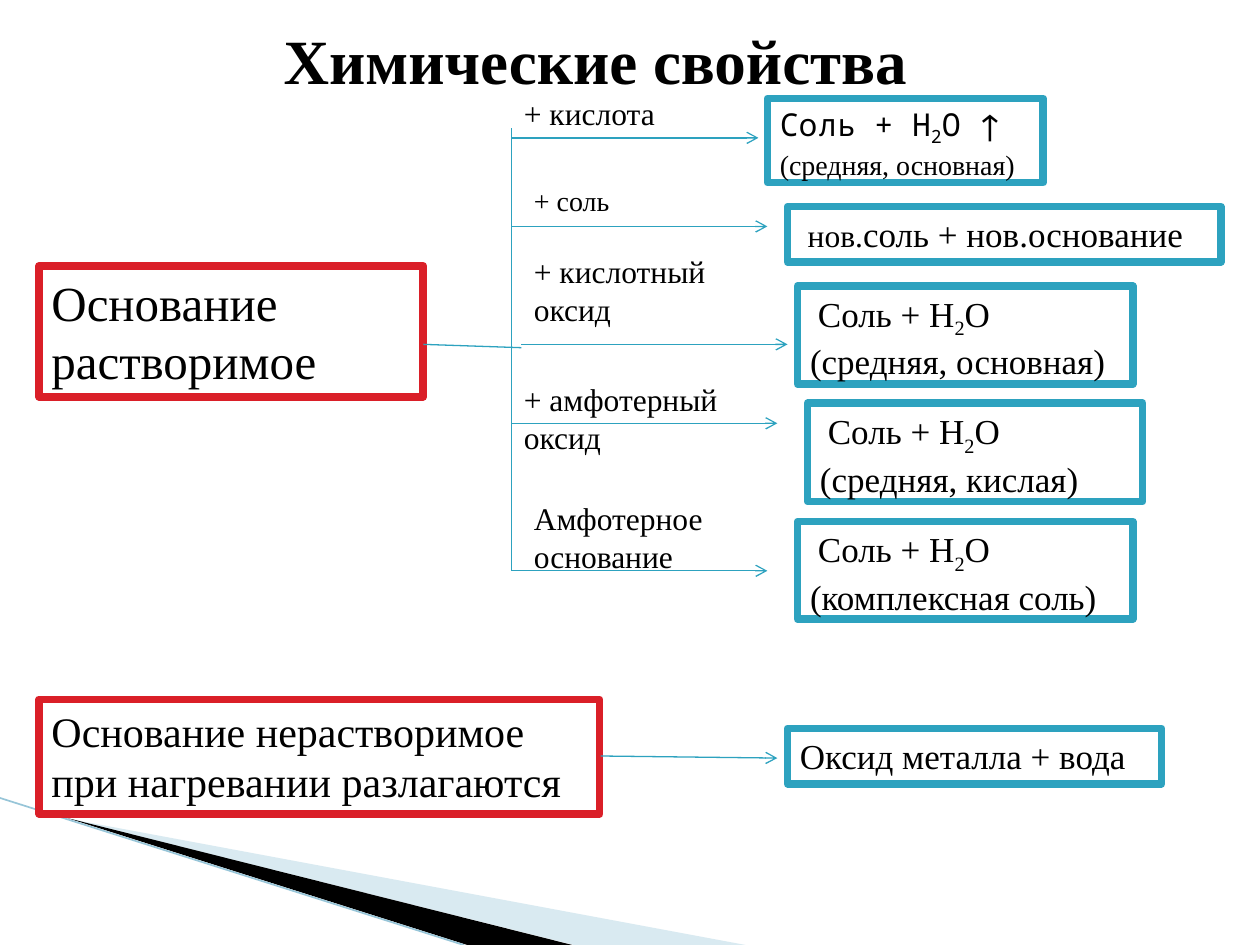
from dataclasses import dataclass

from lxml import etree
from pptx import Presentation
from pptx.dml.color import RGBColor
from pptx.enum.shapes import MSO_CONNECTOR, MSO_SHAPE
from pptx.enum.text import MSO_ANCHOR, MSO_AUTO_SIZE, PP_ALIGN
from pptx.oxml.ns import qn
from pptx.util import Pt

RECTANGLE = MSO_SHAPE.RECTANGLE
STRAIGHT = MSO_CONNECTOR.STRAIGHT
TOP, MIDDLE = MSO_ANCHOR.TOP, MSO_ANCHOR.MIDDLE
FIT_SHAPE = MSO_AUTO_SIZE.SHAPE_TO_FIT_TEXT
LEFT, CENTER = PP_ALIGN.LEFT, PP_ALIGN.CENTER
TITLE_ONLY = 5


@dataclass(frozen=True)
class Theme:
    text: str = "000000"
    paper: str = "FFFFFF"
    base: str = "DA1F28"
    product: str = "2DA2BF"
    wedge: str = "A0CBDC"
    edge: str = "97C5D8"
    font: str = "Times New Roman"
    mono: str = "Noto Sans Mono"
    symbol: str = "TeX Gyre Schola"
    title: int = 36
    heading: int = 28
    subheading: int = 24
    body: int = 20
    label: int = 18
    small: int = 16
    border: float = 4.33
    thin: float = 0.75


THEME = Theme()


def color(value):
    return RGBColor.from_string(value)


def add_text(paragraph, text, size=THEME.body, font=THEME.font, bold=False, subscript=False):
    run = paragraph.add_run()
    run.text = text
    run.font.size = Pt(size)
    run.font.name = font
    run.font.bold = bold
    run.font.color.rgb = color(THEME.text)
    if subscript:
        run._r.get_or_add_rPr().set("baseline", "-25000")


def fill_frame(frame, paragraphs):
    frame.word_wrap = True
    frame.auto_size = FIT_SHAPE
    frame.vertical_anchor = TOP
    for index, runs in enumerate(paragraphs):
        paragraph = frame.add_paragraph() if index else frame.paragraphs[0]
        paragraph.alignment = LEFT
        for text, style in runs:
            add_text(paragraph, text, **style)


def add_title(slide, text, box):
    title = slide.shapes.title
    title.left, title.top, title.width, title.height = map(Pt, box)
    title.text_frame.vertical_anchor = MIDDLE
    paragraph = title.text_frame.paragraphs[0]
    paragraph.alignment = CENTER
    add_text(paragraph, text, size=THEME.title, bold=True)


def add_label(slide, text, box, size):
    shape = slide.shapes.add_textbox(*map(Pt, box))
    fill_frame(shape.text_frame, [[(text, {"size": size})]])


def add_box(slide, paragraphs, box, border):
    shape = slide.shapes.add_shape(RECTANGLE, *map(Pt, box))
    shape.shadow.inherit = False
    shape.fill.solid()
    shape.fill.fore_color.rgb = color(THEME.paper)
    shape.line.color.rgb = color(border)
    shape.line.width = Pt(THEME.border)
    etree.SubElement(shape.line._get_or_add_ln(), qn("a:round"))
    fill_frame(shape.text_frame, paragraphs)


def add_line(slide, start, end, arrow=False, line_color=THEME.product, width=THEME.thin):
    line = slide.shapes.add_connector(STRAIGHT, *map(Pt, start + end))
    line.line.color.rgb = color(line_color)
    line.line.width = Pt(width)
    if arrow:
        etree.SubElement(line.line._get_or_add_ln(), qn("a:tailEnd"), type="arrow")
    etree.SubElement(line._element.spPr, qn("a:effectLst"))


def add_wedge(slide, points, fill, opacity=100):
    start, *others = [(Pt(x), Pt(y)) for x, y in points]
    builder = slide.shapes.build_freeform(*start, scale=1.0)
    builder.add_line_segments(others, close=True)
    shape = builder.convert_to_shape()
    shape.shadow.inherit = False
    shape.fill.solid()
    shape.fill.fore_color.rgb = color(fill)
    shape.line.fill.background()
    if opacity < 100:
        tint = shape._element.spPr.find(qn("a:solidFill"))[0]
        etree.SubElement(tint, qn("a:alpha"), val=str(opacity * 1000))


def salt_and_water(kind):
    return [[
        (" ", {"size": THEME.label}),
        ("Соль + H", {}),
        ("2", {"subscript": True}),
        (f"O ({kind})", {}),
    ]]


def add_decoration(slide):
    add_wedge(slide, [(39.6, 468), (426, 540), (328, 540)], THEME.wedge, opacity=40)
    add_wedge(slide, [(38.5, 467.5), (327, 540), (267, 540)], THEME.text)
    add_line(slide, (0, 456), (265, 540), line_color=THEME.edge, width=0.95)


def add_reactions(slide):
    spine = 292.3
    mono = {"size": THEME.label, "font": THEME.mono}
    gas_salt = [
        [("Соль + H", mono), ("2", {**mono, "subscript": True}), ("O ", mono),
         ("↑", {"size": THEME.label, "font": THEME.symbol})],
        [("(средняя, основная)", {"size": THEME.small})],
    ]
    new_salt = [[(" нов.", {"size": THEME.label}), ("соль + нов.основание", {})]]
    reactions = [
        ("+ кислота", (292.3, 50.4, 152, 29), THEME.label,
         (spine, 78.8), 433.4, gas_salt, (438.5, 56.2, 157.7, 48.2)),
        ("+ соль", (298, 101.5, 135.4, 26.6), THEME.small,
         (spine, 129.4), 438.5, new_salt, (450, 118.1, 247.7, 31.7)),
        ("+ кислотный оксид", (298, 140.4, 140.4, 51), THEME.label,
         (298, 196.8), 450, salt_and_water("средняя, основная"), (455.8, 163.4, 191.5, 56.2)),
        ("+ амфотерный оксид", (292.3, 213.8, 168.5, 51), THEME.label,
         (spine, 241.9), 444.2, salt_and_water("средняя, кислая"), (461.5, 230.4, 191.5, 56.2)),
        ("Амфотерное основание", (298, 281.5, 152, 50.4), THEME.label,
         (spine, 326.2), 438.5, salt_and_water("комплексная соль"), (455.8, 298, 191.5, 55.8)),
    ]
    add_line(slide, (spine, 73.4), (spine, 326.2))
    for label, label_box, size, start, arrow_end, product, product_box in reactions:
        add_line(slide, start, (arrow_end, start[1]), arrow=True)
        add_label(slide, label, label_box, size)
        add_box(slide, product, product_box, THEME.product)


def main():
    presentation = Presentation()
    presentation.slide_width, presentation.slide_height = Pt(720), Pt(540)
    slide = presentation.slides.add_slide(presentation.slide_layouts[TITLE_ONLY])
    add_decoration(slide)
    add_title(slide, "Химические свойства", (22.3, 0, 635.8, 67.7))

    add_box(slide, [[("Основание растворимое", {"size": THEME.heading})]],
            (22.3, 151.9, 219.6, 74.9), THEME.base)
    add_line(slide, (241.9, 196.8), (298, 198.7))
    add_reactions(slide)

    add_box(slide, [[("Основание нерастворимое при нагревании разлагаются",
                      {"size": THEME.subheading})]],
            (22.3, 399.6, 320.4, 65.5), THEME.base)
    add_line(slide, (343.2, 432), (444.2, 433.2), arrow=True)
    add_box(slide, [[("Оксид металла + вода", {})]], (450, 416.2, 213.8, 31.7), THEME.product)
    presentation.save("out.pptx")


if __name__ == "__main__":
    main()
